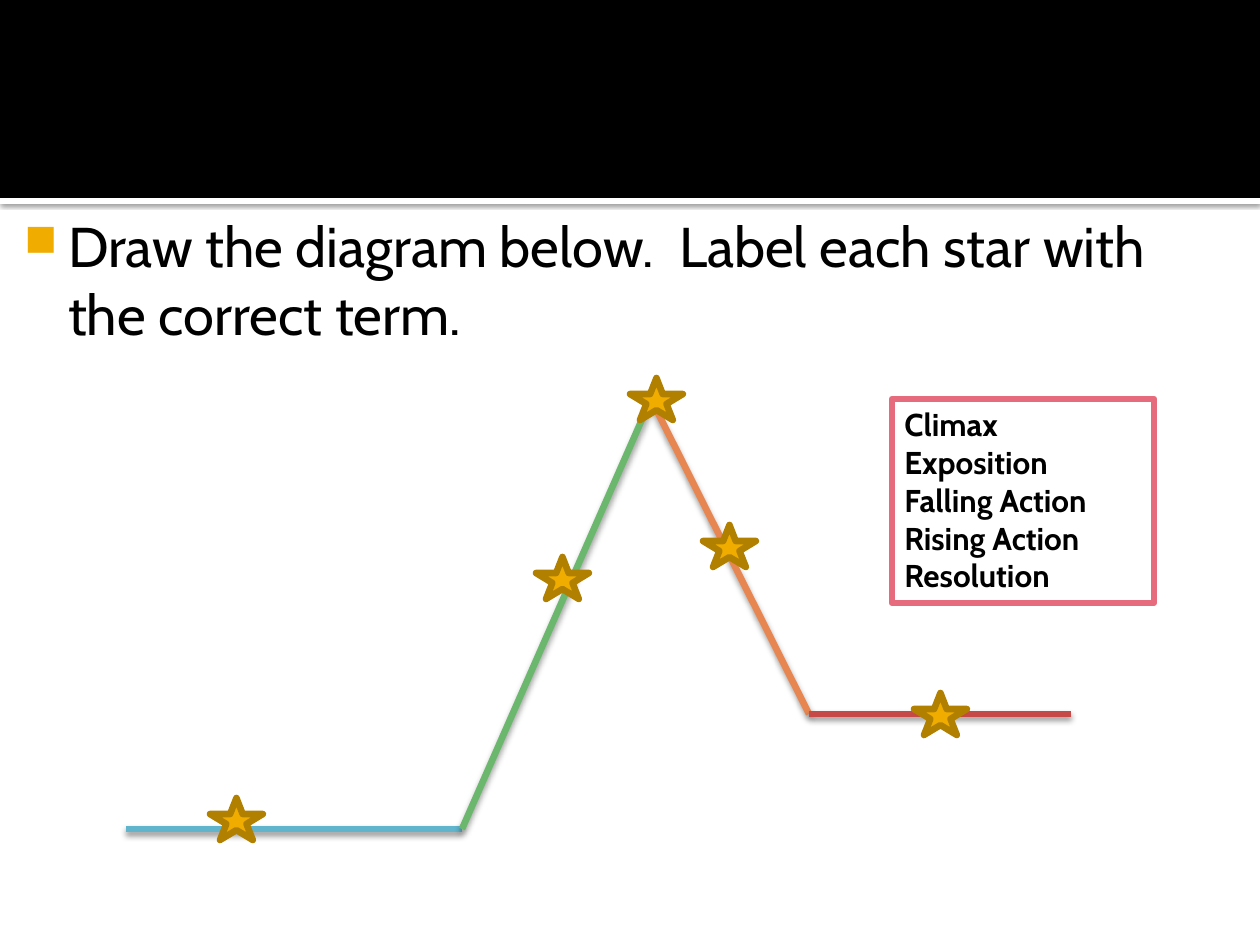
from itertools import pairwise
from lxml.etree import SubElement
from pptx import Presentation
from pptx.dml.color import RGBColor as RGB
from pptx.enum.shapes import MSO_CONNECTOR as CONN, MSO_SHAPE as SHAPE
from pptx.enum.text import MSO_ANCHOR as ANCHOR, MSO_AUTO_SIZE as FIT, PP_ALIGN as ALIGN
from pptx.oxml.ns import qn
from pptx.util import Pt

THEME = {
    "font": "Cabin", "text": "000000", "band": "000000", "paper": "FFFFFF",
    "accent": "F0AD00", "star_line": "B28000", "word_line": "E66C7D",
    "arc": ["60B5CC", "6BB76D", "E88651", "C64847"],
    "task_size": 32, "word_size": 18, "line_width": 3.78,
}
TERMS = ["Climax", "Exposition", "Falling Action", "Rising Action", "Resolution"]
ARC_POINTS = [(0, 451), (336, 451), (525, 21), (683, 336), (945, 336)]
STARS = [(504, 0), (788, 315), (410, 179), (577, 147), (84, 420)]
STAR_SIZE = (53, 42)


def px(n):
    return n * 914400 // 126


def set_all(obj, values):
    for name, value in values.items():
        setattr(obj, name, value)


def set_line(line, color):
    line.color.rgb = RGB.from_string(color)
    line.width = Pt(THEME["line_width"])


def add_shadow(sp, alpha, blur, dist):
    effects = SubElement(sp._element.spPr, qn("a:effectLst"))
    shadow = SubElement(effects, qn("a:outerShdw"), blurRad=str(Pt(blur)),
                        dist=str(Pt(dist)), dir="5400000", rotWithShape="0")
    color = SubElement(shadow, qn("a:srgbClr"), val="000000")
    SubElement(color, qn("a:alpha"), val=str(alpha * 1000))


def add_box(s, kind, box, fill, line=None):
    sp = s.shapes.add_shape(kind, *map(px, box))
    sp.fill.solid()
    sp.fill.fore_color.rgb = RGB.from_string(fill)
    if line:
        set_line(sp.line, line)
    else:
        sp.line.fill.background()
    return sp


def add_text(p, text, size, bold=False):
    r = p.add_run()
    r.text = text
    set_all(r.font, {"name": THEME["font"], "size": Pt(size), "bold": bold})
    r.font.color.rgb = RGB.from_string(THEME["text"])


def add_header(s, box):
    x, y, w, h = box
    strip = add_box(s, SHAPE.RECTANGLE, (x, y + h, w, 6), THEME["paper"])
    add_shadow(strip, 60, 2.5, 0.8)
    band = add_box(s, SHAPE.RECTANGLE, box, THEME["band"])
    band.shadow.inherit = False


def add_task(s, box):
    tf = s.shapes.add_textbox(*map(px, box)).text_frame
    set_all(tf, {"word_wrap": True, "margin_left": px(8), "margin_top": px(13),
                 "margin_right": px(13), "margin_bottom": px(6)})
    p = tf.paragraphs[0]
    pPr = p._p.get_or_add_pPr()
    pPr.set("marL", str(px(60)))
    pPr.set("indent", str(px(-44)))
    color = SubElement(pPr, qn("a:buClr"))
    SubElement(color, qn("a:srgbClr"), val=THEME["accent"])
    SubElement(pPr, qn("a:buSzPct"), val="80000")
    SubElement(pPr, qn("a:buChar"), char="■")
    add_text(p, "Draw the diagram below.  Label each star with the correct term.",
             THEME["task_size"])


def add_plot_diagram(s, box):
    x, y = box[:2]
    for (start, end), color in zip(pairwise(ARC_POINTS), THEME["arc"]):
        ends = (x + start[0], y + start[1], x + end[0], y + end[1])
        line = s.shapes.add_connector(CONN.STRAIGHT, *map(px, ends))
        set_line(line.line, color)
        add_shadow(line, 38, 3.5, 2)
    for dx, dy in STARS:
        star = add_box(s, SHAPE.STAR_5_POINT, (x + dx, y + dy, *STAR_SIZE),
                       THEME["accent"], THEME["star_line"])
        star.shadow.inherit = False


def add_word_bank(s, box):
    sp = add_box(s, SHAPE.RECTANGLE, box, THEME["paper"], THEME["word_line"])
    sp.shadow.inherit = False
    tf = sp.text_frame
    set_all(tf, {"word_wrap": True, "auto_size": FIT.SHAPE_TO_FIT_TEXT,
                 "vertical_anchor": ANCHOR.TOP})
    for i, term in enumerate(TERMS):
        p = tf.add_paragraph() if i else tf.paragraphs[0]
        p.alignment = ALIGN.LEFT
        add_text(p, term, THEME["word_size"], True)


def main():
    prs = Presentation()
    set_all(prs, {"slide_width": px(1260), "slide_height": px(945)})
    s = prs.slides.add_slide(prs.slide_layouts[6])
    add_header(s, (0, 0, 1260, 198))
    add_task(s, (0, 199, 1229, 703))
    add_plot_diagram(s, (126, 378, 945, 462))
    add_word_bank(s, (892, 399, 262, 204))
    prs.save("out.pptx")


if __name__ == "__main__":
    main()
